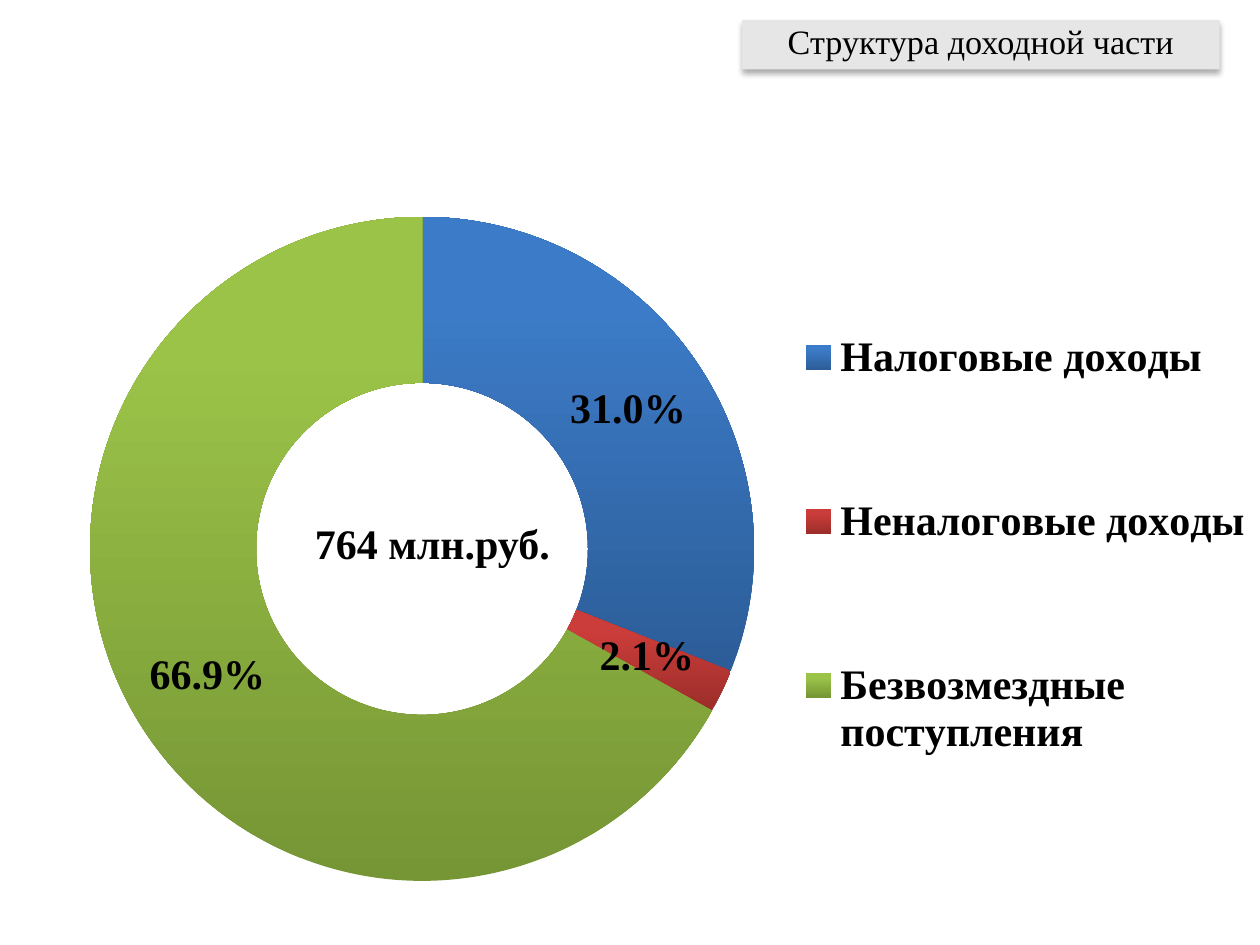
from lxml.etree import SubElement
from pptx import Presentation
from pptx.chart.data import CategoryChartData
from pptx.dml.color import RGBColor
from pptx.enum.chart import XL_CHART_TYPE, XL_LEGEND_POSITION
from pptx.enum.shapes import MSO_SHAPE
from pptx.enum.text import MSO_ANCHOR, PP_ALIGN
from pptx.oxml import parse_xml
from pptx.oxml.ns import nsdecls, qn
from pptx.util import Inches, Pt

FONT = "Times New Roman"
COLORS = {"text": "000000", "banner": "E6E6E6"}
# category: value, bottom colour, top colour
INCOME = {
    "Налоговые доходы": (31.0, "2C5D98", "3C7BC7"),
    "Неналоговые доходы": (2.1, "9B2D2A", "CB3D3A"),
    "Безвозмездные поступления": (66.9, "769535", "9BC348"),
}


def rgb(value):
    return RGBColor.from_string(value)


def style_font(font, size, bold=False):
    for name, value in {"name": FONT, "size": Pt(size), "bold": bold}.items():
        setattr(font, name, value)
    font.color.rgb = rgb(COLORS["text"])


def write(tf, text, size, bold=False):
    p = tf.paragraphs[0]
    r = p.add_run()
    r.text = text
    style_font(r.font, size, bold)
    return p


def add_shadow(sp):
    """Add a soft shadow straight below the shape."""
    sp.shadow.inherit = False
    effects = sp._element.spPr.find(qn("a:effectLst"))
    effects.append(parse_xml(
        f'<a:outerShdw {nsdecls("a")} blurRad="{Pt(3.5)}" dist="{Pt(2.2)}" '
        'dir="5400000" rotWithShape="0"><a:srgbClr val="000000">'
        '<a:alpha val="32000"/></a:srgbClr></a:outerShdw>'))


def add_banner(s, text):
    sp = s.shapes.add_shape(MSO_SHAPE.RECTANGLE, Inches(5.89), Inches(0.16),
                            Inches(3.79), Inches(0.39))
    sp.fill.solid()
    sp.fill.fore_color.rgb = rgb(COLORS["banner"])
    sp.line.fill.background()
    add_shadow(sp)
    tf = sp.text_frame
    tf.word_wrap = True
    tf.vertical_anchor = MSO_ANCHOR.MIDDLE
    p = write(tf, text, 19.5)
    p.alignment = PP_ALIGN.CENTER
    p.line_spacing = 0.8


def add_total(s, text):
    tf = s.shapes.add_textbox(Inches(2.4), Inches(4.06), Inches(2.99),
                              Inches(0.5)).text_frame
    tf.word_wrap = True
    write(tf, text, 24, bold=True)


def set_layout(parent, index, inner=False, **box):
    """Place a chart part by fractions of the chart area."""
    for old in parent.findall(qn("c:layout")):
        parent.remove(old)
    layout = parse_xml(f'<c:layout {nsdecls("c")}/>')
    manual = SubElement(layout, qn("c:manualLayout"))
    values = {"layoutTarget": "inner"} if inner else {}
    values |= {"xMode": "edge", "yMode": "edge"} | box
    for tag, value in values.items():
        SubElement(manual, qn(f"c:{tag}")).set("val", str(value))
    parent.insert(index, layout)


def add_doughnut(s):
    data = CategoryChartData()
    data.categories = list(INCOME)
    data.add_series("Доходы", [value for value, *_ in INCOME.values()])
    chart = s.shapes.add_chart(XL_CHART_TYPE.DOUGHNUT, Inches(0), Inches(1.15),
                               Inches(10), Inches(6.35), data).chart
    style_font(chart.font, 24, bold=True)
    chart.has_title = False
    chart.has_legend = True
    chart.legend.position = XL_LEGEND_POSITION.RIGHT
    chart.legend.include_in_layout = False
    set_layout(chart.legend._element, 1, x=0.63, y=0.09, w=0.37, h=0.82)

    plot = chart.plots[0]
    set_layout(plot._element.getparent(), 0, inner=True,
               x=0.07, y=0.09, w=0.53, h=0.83)
    plot._element.find(qn("c:holeSize")).set("val", "50")
    plot.has_data_labels = True
    labels = {"show_percentage": True, "show_value": False,
              "number_format": "0.0%", "number_format_is_linked": False}
    for name, value in labels.items():
        setattr(plot.data_labels, name, value)
    style_font(plot.data_labels.font, 24, bold=True)

    for i, (_, *shades) in enumerate(INCOME.values()):
        fill = plot.series[0].points[i].format.fill
        fill.gradient()
        fill.gradient_angle = 90
        for stop, shade, position in zip(fill.gradient_stops, shades, (0, 0.8)):
            stop.color.rgb = rgb(shade)
            stop.position = position


def main():
    prs = Presentation()
    prs.slide_width, prs.slide_height = Inches(10), Inches(7.5)
    s = prs.slides.add_slide(prs.slide_layouts[6])
    add_banner(s, "Структура доходной части")
    add_total(s, "764 млн.руб.")
    add_doughnut(s)
    prs.save("out.pptx")


if __name__ == "__main__":
    main()
